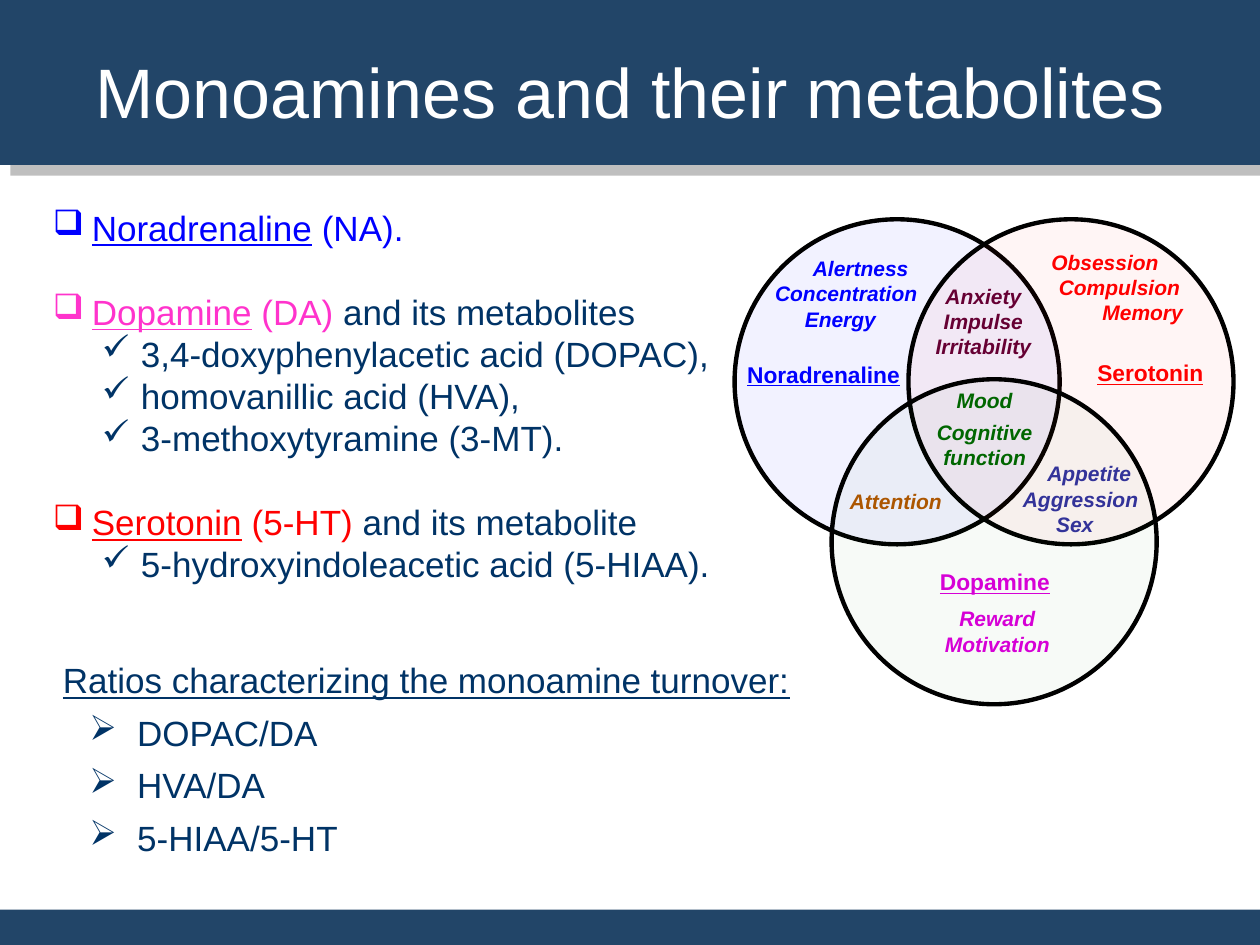
"""Build a slide on monoamines, their metabolites and their overlapping roles."""
from lxml import etree
from pptx import Presentation, util as u
from pptx.dml.color import RGBColor
from pptx.enum import shapes, text
from pptx.oxml import ns

NAVY, INK, BLACK, WHITE = "224568", "003366", "000000", "FFFFFF"
BLUE, PINK, RED = "0000FF", "FF33CC", "FF0000"
PURPLE, GREEN = "D600D6", "006600"
CELL = 0.1
SPACE = 0.046
DIAMETER = 25.8


def color(value):
    return RGBColor.from_string(value)


def cells(*counts):
    return [u.Inches(count * CELL) for count in counts]


def child(parent, tag, **attributes):
    return etree.SubElement(parent, ns.qn(tag), attributes)


def write(para, content, size=20, ink=INK, bold=False, italic=False, underline=False):
    span = para.add_run()
    span.text = content
    font = span.font
    font.name, font.size, font.color.rgb = "Arial", u.Pt(size), color(ink)
    font.bold, font.italic, font.underline = bold, italic, underline


class Slide:
    """Hold the current page and draw its elements on a grid of 100 by 75 cells."""

    def __init__(self, deck):
        self.page = deck.slides.add_slide(deck.slide_layouts[5])

    def title(self, content, left, top, width, height):
        box = self.page.shapes.title
        box.left, box.top, box.width, box.height = cells(left, top, width, height)
        box.text_frame.vertical_anchor = text.MSO_ANCHOR.MIDDLE
        para = box.text_frame.paragraphs[0]
        para.alignment = text.PP_ALIGN.CENTER
        write(para, content, size=40, ink=WHITE)
        self.page.shapes._spTree.append(box._element)

    def shape(self, kind, fill, left, top, width, height, opacity=100):
        item = self.page.shapes.add_shape(kind, *cells(left, top, width, height))
        item.shadow.inherit = False
        item.fill.solid()
        item.fill.fore_color.rgb = color(fill)
        if opacity < 100:
            tint = item._element.spPr.find(".//" + ns.qn("a:srgbClr"))
            child(tint, "a:alpha", val=str(opacity * 1000))
        item.line.fill.background()
        return item

    def bar(self, top, height, shadow=False):
        item = self.shape(shapes.MSO_SHAPE.RECTANGLE, NAVY, 0, top, 100, height)
        if shadow:
            effects = item._element.spPr.find(ns.qn("a:effectLst"))
            cast = child(effects, "a:outerShdw", dist=str(u.Pt(8.5)), dir="2700000",
                         algn="ctr", rotWithShape="0")
            tint = child(cast, "a:srgbClr", val="808080")
            child(tint, "a:alpha", val="50000")

    def circle(self, fill, left, top, opacity):
        item = self.shape(shapes.MSO_SHAPE.OVAL, fill, left, top, DIAMETER, DIAMETER, opacity)
        item.line.color.rgb = color(BLACK)
        item.line.width = u.Pt(2.5)

    def frame(self, left, top, width, height):
        box = self.page.shapes.add_textbox(*cells(left, top, width, height))
        box.text_frame.word_wrap = True
        return box.text_frame

    def paragraphs(self, frame, count):
        return [frame.paragraphs[0]] + [frame.add_paragraph() for _ in range(count - 1)]

    def outline(self, items, left, top, width, height, after=0):
        """Draw items of bullet, indent, hanging, space before and spans."""
        paras = self.paragraphs(self.frame(left, top, width, height), len(items))
        for para, (bullet, indent, hanging, before, spans) in zip(paras, items):
            para.space_before, para.space_after = u.Pt(before), u.Pt(after)
            properties = para._p.get_or_add_pPr()
            properties.set("marL", str(u.Inches(indent)))
            properties.set("indent", str(u.Inches(-hanging)))
            if bullet:
                child(properties, "a:buChar", char=bullet)
            for content, ink, underline in spans:
                write(para, content, ink=ink, underline=underline)

    def heading(self, content, ink, left, top, width):
        frame = self.frame(left, top, width, 3.2)
        frame.margin_left = frame.margin_right = 0
        para = frame.paragraphs[0]
        para.alignment = text.PP_ALIGN.CENTER
        write(para, content, size=13, ink=ink, bold=True, underline=True)

    def label(self, lines, ink, left, top, width, shifts=(0, 0, 0), gap=0):
        frame = self.frame(left, top, width, 1 + 2 * len(lines))
        frame.margin_left = frame.margin_right = 0
        paras = self.paragraphs(frame, len(lines))
        for para, line, shift in zip(paras, lines, shifts):
            para.alignment = text.PP_ALIGN.CENTER
            para._p.get_or_add_pPr().set("marL", str(u.Inches(shift * SPACE)))
            write(para, line, size=12, ink=ink, bold=True, italic=True)
        if gap:
            paras[1].space_before = u.Pt(gap)


def group(name, suffix, ink, rest="", before=24):
    spans = [(name, ink, True), (suffix, ink, False)]
    if rest:
        spans.append((rest, INK, False))
    return "❑", 0.69, 0.31, before, spans


def metabolite(name):
    return "✓", 1.08, 0.31, 0, [(name, INK, False)]


def ratio(name):
    return "➢", 0.8, 0.38, 0, [(name, INK, False)]


def main():
    deck = Presentation()
    deck.slide_width, deck.slide_height = cells(100, 75)
    slide = Slide(deck)
    slide.bar(72.2, 2.8)
    slide.bar(0, 13.1, shadow=True)
    slide.title("Monoamines and their metabolites", 0, 2.9, 100, 8.5)

    slide.outline([
        group("Noradrenaline", " (NA).", BLUE, before=0),
        group("Dopamine", " (DA)", PINK, " and its metabolites"),
        metabolite("3,4-doxyphenylacetic acid (DOPAC),"),
        metabolite("homovanillic acid (HVA),"),
        metabolite("3-methoxytyramine (3-MT)."),
        group("Serotonin", " (5-HT) ", RED, "and its metabolite"),
        metabolite("5-hydroxyindoleacetic acid (5-HIAA)."),
    ], -0.6, 15.9, 60.8, 38.1)

    for fill, left, top, opacity in [(BLUE, 58.3, 17.4, 5), (RED, 72.1, 17.4, 4),
                                     (GREEN, 66, 30.1, 3)]:
        slide.circle(fill, left, top, opacity)

    slide.heading("Noradrenaline", BLUE, 58.2, 28.1, 14.3)
    slide.heading("Serotonin", RED, 86, 28, 10.6)
    slide.heading("Dopamine", PURPLE, 73.7, 44.6, 10.5)
    slide.label(["Alertness", "Concentration", "Energy"], BLUE, 59.5, 19.8, 14.4, (7, 2, 0))
    slide.label(["Obsession", "Compulsion", "Memory"], RED, 80.4, 19.3, 14.6, (0, 5, 13))
    slide.label(["Reward", "Motivation"], PURPLE, 73.9, 47.6, 10.5)
    slide.label(["Anxiety", "Impulse", "Irritability"], "660033", 73.2, 22, 9.7)
    slide.label(["Mood", "Cognitive", "function"], GREEN, 73.3, 30.3, 9.7, gap=3.5)
    slide.label(["Attention"], "AC5600", 66.4, 38.3, 9.4)
    slide.label(["Appetite", "Aggression", "Sex"], "333399", 79.2, 36.1, 12.2, (5, 2, 0))

    heading = "Ratios characterizing the monoamine turnover:"
    slide.outline([("", 0.21, 0, 0, [(heading, INK, True)])]
                  + [ratio(name) for name in ("DOPAC/DA", "HVA/DA", "5-HIAA/5-HT")],
                  1.9, 51.8, 64.1, 17, after=6)
    deck.save("out.pptx")


if __name__ == "__main__":
    main()
